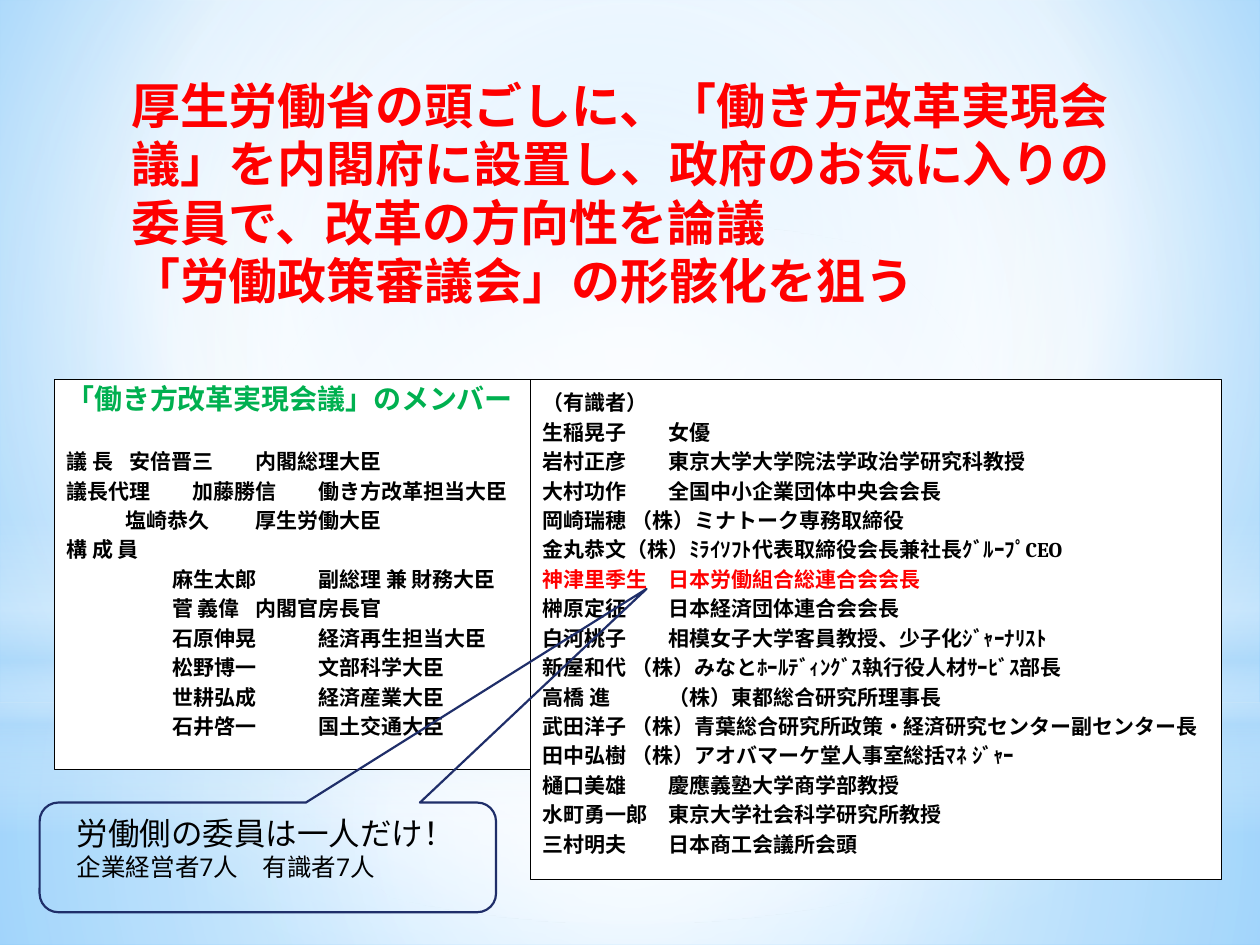
from lxml.etree import SubElement as Sub
from pptx import Presentation
from pptx.dml.color import RGBColor as RGB
from pptx.enum.shapes import MSO_SHAPE as Kind
from pptx.enum.text import MSO_ANCHOR as Anchor, MSO_AUTO_SIZE as Auto, PP_ALIGN as Align
from pptx.oxml.ns import qn
from pptx.util import Cm, Pt

HUES = {"red": "FF0000", "green": "00B050", "black": "000000", "white": "FFFFFF",
        "navy": "1F2E69", "pale": "B4DCFA", "sky": "9ED5FF", "deep": "5BB9FF"}
SANS, SERIF = "Noto Sans CJK JP", "Cambria"
PITCH = 16.8  # line height of the member lists, in points
GAP = 1.98  # from a name to its post, in cm

TITLE = ["厚生労働省の頭ごしに、「働き方改革実現会議」を内閣府に設置し、"
         "政府のお気に入りの委員で、改革の方向性を論議",
         "「労働政策審議会」の形骸化を狙う"]
HEADS = ["議 長\t安倍晋三\t内閣総理大臣", "議長代理\t加藤勝信\t働き方改革担当大臣"]
CABINET = ["麻生太郎\t副総理 兼 財務大臣", "菅 義偉\t内閣官房長官",
           "石原伸晃\t経済再生担当大臣", "松野博一\t文部科学大臣",
           "世耕弘成\t経済産業大臣", "石井啓一\t国土交通大臣"]
UNION = "神津里季生\t日本労働組合総連合会会長"
EXPERTS = ["（有識者）", "生稲晃子\t女優", "岩村正彦\t東京大学大学院法学政治学研究科教授",
           "大村功作\t全国中小企業団体中央会会長", "岡崎瑞穂 （株）ミナトーク専務取締役",
           "金丸恭文（株）ﾐﾗｲｿﾌﾄ代表取締役会長兼社長ｸﾞﾙｰﾌﾟCEO", UNION,
           "榊原定征\t日本経済団体連合会会長",
           "白河桃子\t相模女子大学客員教授、少子化ｼﾞｬｰﾅﾘｽﾄ",
           "新屋和代 （株）みなとﾎｰﾙﾃﾞｨﾝｸﾞｽ執行役人材ｻｰﾋﾞｽ部長",
           "高橋 進\t（株）東都総合研究所理事長",
           "武田洋子 （株）青葉総合研究所政策・経済研究センター副センター長",
           "田中弘樹 （株）アオバマーケ堂人事室総括ﾏﾈ ｼﾞｬｰ",
           "樋口美雄\t慶應義塾大学商学部教授", "水町勇一郎\t東京大学社会科学研究所教授",
           "三村明夫\t日本商工会議所会頭"]


def blend(props, stops, to=None, angle=90):
    """Replace the fill in props by a gradient of (position, hue, opacity) stops."""
    old = props.find(qn("a:gradFill"))
    for part in list(old):
        old.remove(part)
    ramp = Sub(old, qn("a:gsLst"))
    for pos, hue, alpha in stops:
        stop = Sub(ramp, qn("a:gs"), pos=str(pos * 1000))
        tint = Sub(stop, qn("a:srgbClr"), val=HUES[hue])
        if alpha < 100:
            Sub(tint, qn("a:alpha"), val=str(alpha * 1000))
    if to:
        path = Sub(old, qn("a:path"), path="circle")
        Sub(path, qn("a:fillToRect"), **{k: str(v * 1000) for k, v in zip("ltrb", to)})
    else:
        Sub(old, qn("a:lin"), ang=str(angle * 60000), scaled="0")


def shape(slide, kind, box, fill=None, line=None, width=0.5):
    item = slide.shapes.add_shape(kind, *map(Cm, box))
    item.shadow.inherit = False
    if fill:
        item.fill.solid()
        item.fill.fore_color.rgb = RGB.from_string(HUES[fill])
    else:
        item.fill.background()
    if line:
        item.line.color.rgb = RGB.from_string(HUES[line])
        item.line.width = Pt(width)
    else:
        item.line.fill.background()
    return item


def glow(slide, kind, box, stops, to=None):
    item = shape(slide, kind, box)
    item.fill.gradient()
    blend(item._element.spPr, stops, to)


def write(frame, text, size=12, hue="black", font=SERIF, bold=True, pitch=PITCH,
          align=Align.JUSTIFY, before=0, indent=0, tabs=()):
    """Add one paragraph; indent and tabs are in cm."""
    para = frame.paragraphs[0]
    if para.runs:
        para = frame.add_paragraph()
    para.alignment, para.line_spacing = align, Pt(pitch)
    para.space_before = Pt(before)
    props = para._p.get_or_add_pPr()
    props.set("marL", "0")
    props.set("indent", str(Cm(indent)))
    if tabs:
        stops = Sub(props, qn("a:tabLst"))
        for tab in tabs:
            Sub(stops, qn("a:tab"), pos=str(Cm(tab)), algn="l")
    run = para.add_run()
    run.text = text
    run.font.size, run.font.bold, run.font.name = Pt(size), bold, font
    run.font.color.rgb = RGB.from_string(HUES[hue])
    Sub(run._r.get_or_add_rPr(), qn("a:ea"), typeface=SANS)


def setup(frame):
    frame.word_wrap = True
    frame.auto_size = Auto.NONE
    frame.vertical_anchor = Anchor.TOP
    return frame


def panel(slide, box):
    return setup(shape(slide, Kind.RECTANGLE, box, "white", "black").text_frame)


def backdrop(slide):
    slide.background.fill.gradient()
    blend(slide.background._cSld.bg.bgPr,
          [(0, "sky", 100), (60, "white", 100), (100, "deep", 100)], (20, 10, 20, 60))
    mid = (50, 50, 50, 50)
    glow(slide, Kind.RECTANGLE, (0, 14.17, 25.4, 4.88),
         [(0, "white", 91), (37, "white", 76), (100, "pale", 79)], mid)
    glow(slide, Kind.RECTANGLE, (0, 0, 25.4, 14.17),
         [(0, "white", 89), (48, "white", 62), (100, "pale", 79)], mid)
    glow(slide, Kind.RECTANGLE, (0, 10.46, 25.4, 6.35),
         [(0, "white", 0), (29, "white", 30), (45, "pale", 40),
          (55, "white", 26), (65, "pale", 60), (100, "white", 0)])
    glow(slide, Kind.OVAL, (0, 4.45, 25.4, 14.17),
         [(0, "white", 100), (56, "white", 0)], mid)


def heading(slide):
    title = slide.shapes.title
    title.left, title.top, title.width, title.height = map(Cm, (2.39, 1.4, 20.6, 5.05))
    slide.shapes._spTree.append(title._element)  # in front of the backdrop
    frame = setup(title.text_frame)
    for text in TITLE:
        write(frame, text, size=28, hue="red", font=SANS, pitch=33.4, align=Align.LEFT)


def members(slide):
    frame = panel(slide, (1.09, 7.65, 10.8, 7.87))
    write(frame, "「働き方改革実現会議」のメンバー", size=16, hue="green")
    for i, text in enumerate(HEADS):
        write(frame, text, before=0 if i else PITCH, tabs=(1.85, 1.85 + GAP))
    write(frame, "塩崎恭久\t厚生労働大臣", indent=1.2, tabs=(1.2 + GAP,))
    write(frame, "構 成 員")
    for text in CABINET:
        gap = 1.65 if text.startswith("菅") else GAP
        write(frame, text, indent=2.13, tabs=(2.13 + gap,))


def experts(slide):
    frame = panel(slide, (10.69, 7.65, 13.94, 10.08))
    for text in EXPERTS:
        write(frame, text, hue="red" if text == UNION else "black", tabs=(GAP, 2.3))


def remark(slide):
    bubble = shape(slide, Kind.ROUNDED_RECTANGULAR_CALLOUT, (0.8, 16.18, 9.2, 2.21),
                   line="navy", width=1.25)
    for i, value in enumerate((0.83, -2.45, 0.17)):
        bubble.adjustments[i] = value
    box = slide.shapes.add_textbox(*map(Cm, (1.3, 16.28, 8.2, 1.63)))
    frame = setup(box.text_frame)
    for text, size in (("労働側の委員は一人だけ！", 18), ("企業経営者7人\u3000有識者7人".replace("\u3000", "　"), 14)):
        write(frame, text, size=size, font="Roboto", bold=False,
              pitch=size * 1.2, align=Align.LEFT)


def main():
    deck = Presentation()
    deck.slide_width, deck.slide_height = Cm(25.4), Cm(19.05)
    slide = deck.slides.add_slide(deck.slide_layouts[5])
    for part in (backdrop, heading, members, experts, remark):
        part(slide)
    deck.save("out.pptx")


if __name__ == "__main__":
    main()
